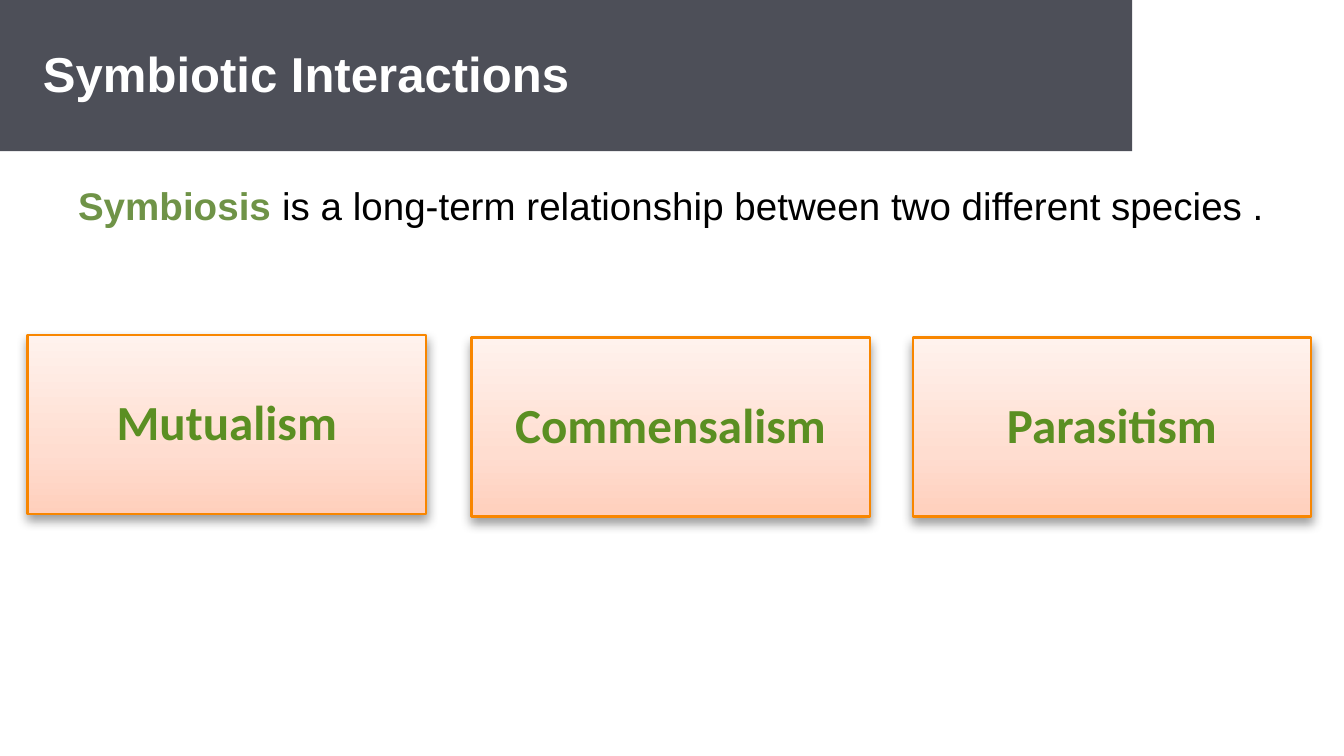
"""Build a slide that introduces three kinds of symbiotic interaction."""
from copy import deepcopy
from dataclasses import dataclass

from lxml import etree
from pptx import Presentation
from pptx import util as u
from pptx.dml.color import RGBColor
from pptx.enum import shapes, text
from pptx.oxml import ns
from pptx.shapes.autoshape import Shape
from pptx.slide import Slide

SLATE = RGBColor(0x4D, 0x4F, 0x58)
WHITE = RGBColor(0xFF, 0xFF, 0xFF)
BLACK = RGBColor(0, 0, 0)
SAGE = RGBColor(0x6F, 0x93, 0x47)
GREEN = RGBColor(0x5B, 0x8F, 0x22)
ORANGE = RGBColor(0xF8, 0x86, 0x00)
PEACH_STOPS = (
    (0, RGBColor(0xFF, 0xCF, 0xBC)),
    (0.35, RGBColor(0xFF, 0xDD, 0xD0)),
    (1, RGBColor(0xFF, 0xF2, 0xED)),
)
PAGE_WIDTH, PAGE_HEIGHT = 383.76, 216
BANNER_WIDTH, BANNER_HEIGHT = 323.28, 43.2
CARD_WIDTH, CARD_HEIGHT = 113.76, 51.12


@dataclass
class Span:
    wording: str
    size: float
    color: RGBColor
    bold: bool = True
    name: str = "Arial"


@dataclass
class Card:
    label: str
    left: float
    top: float


CARDS = (
    Card("Mutualism", 7.92, 95.76),
    Card("Commensalism", 134.64, 96.48),
    Card("Parasitism", 260.64, 96.48),
)


def apply(target: object, values: dict) -> None:
    for name, value in values.items():
        setattr(target, name, value)


def place(box: Shape, left: float, top: float, width: float, height: float) -> None:
    apply(box, {"left": u.Pt(left), "top": u.Pt(top),
                "width": u.Pt(width), "height": u.Pt(height)})


def write(box: Shape, spans: list[Span], inset: tuple[float, float],
          anchor: text.MSO_ANCHOR, paragraph_format: dict) -> None:
    side, end = map(u.Pt, inset)
    frame = box.text_frame
    apply(frame, {"word_wrap": True, "auto_size": text.MSO_AUTO_SIZE.NONE,
                  "vertical_anchor": anchor, "margin_left": side,
                  "margin_right": side, "margin_top": end, "margin_bottom": end})
    para = frame.paragraphs[0]
    apply(para, paragraph_format)
    for span in spans:
        run = para.add_run()
        run.text = span.wording
        apply(run.font, {"name": span.name, "size": u.Pt(span.size), "bold": span.bold})
        run.font.color.rgb = span.color


def fill_peach(box: Shape) -> None:
    box.fill.gradient()
    box.fill.gradient_angle = 90
    stop_list = box._element.spPr.find(".//" + ns.qn("a:gsLst"))
    stop_list.append(deepcopy(stop_list[-1]))
    for stop, (position, color) in zip(box.fill.gradient_stops, PEACH_STOPS):
        stop.position = position
        stop.color.rgb = color


def cast_shadow(box: Shape) -> None:
    box.shadow.inherit = False
    effects = box._element.spPr.find(ns.qn("a:effectLst"))
    shadow = etree.SubElement(effects, ns.qn("a:outerShdw"), blurRad=str(u.Pt(3.1)),
                              dist=str(u.Pt(1.6)), dir="5400000", rotWithShape="0")
    color = etree.SubElement(shadow, ns.qn("a:srgbClr"), val=str(BLACK))
    etree.SubElement(color, ns.qn("a:alpha"), val="38000")


def draw_card(page: Slide, card: Card) -> None:
    box = page.shapes.add_shape(
        shapes.MSO_SHAPE.RECTANGLE, u.Pt(card.left), u.Pt(card.top),
        u.Pt(CARD_WIDTH), u.Pt(CARD_HEIGHT))
    fill_peach(box)
    box.line.color.rgb = ORANGE
    box.line.width = u.Pt(0.75)
    cast_shadow(box)
    write(box, [Span(card.label, 14, GREEN, name="Calibri")], (4.32, 4.32),
          text.MSO_ANCHOR.MIDDLE,
          {"alignment": text.PP_ALIGN.CENTER, "line_spacing": 0.9})


def draw_title(page: Slide) -> None:
    title = page.shapes.title
    place(title, 0, 0, BANNER_WIDTH, BANNER_HEIGHT)
    title.fill.solid()
    title.fill.fore_color.rgb = SLATE
    write(title, [Span("Symbiotic Interactions", 14, WHITE)], (12.24, 5.04),
          text.MSO_ANCHOR.MIDDLE,
          {"alignment": text.PP_ALIGN.LEFT, "line_spacing": 0.95})


def draw_definition(page: Slide) -> None:
    box = page.shapes.add_textbox(0, u.Pt(BANNER_HEIGHT), u.Pt(PAGE_WIDTH),
                                  u.Pt(PAGE_HEIGHT - BANNER_HEIGHT))
    spans = [
        Span("Symbiosis", 11, SAGE),
        Span(" is a long-term relationship between two different species .",
             11, BLACK, bold=False),
    ]
    write(box, spans, (12.96, 7.2), text.MSO_ANCHOR.TOP,
          {"alignment": text.PP_ALIGN.CENTER, "line_spacing": 1.13,
           "space_before": u.Pt(10)})


def main() -> None:
    deck = Presentation()
    apply(deck, {"slide_width": u.Pt(PAGE_WIDTH), "slide_height": u.Pt(PAGE_HEIGHT)})
    page = deck.slides.add_slide(deck.slide_layouts[5])
    draw_title(page)
    draw_definition(page)
    for card in CARDS:
        draw_card(page, card)
    deck.save("out.pptx")


if __name__ == "__main__":
    main()
